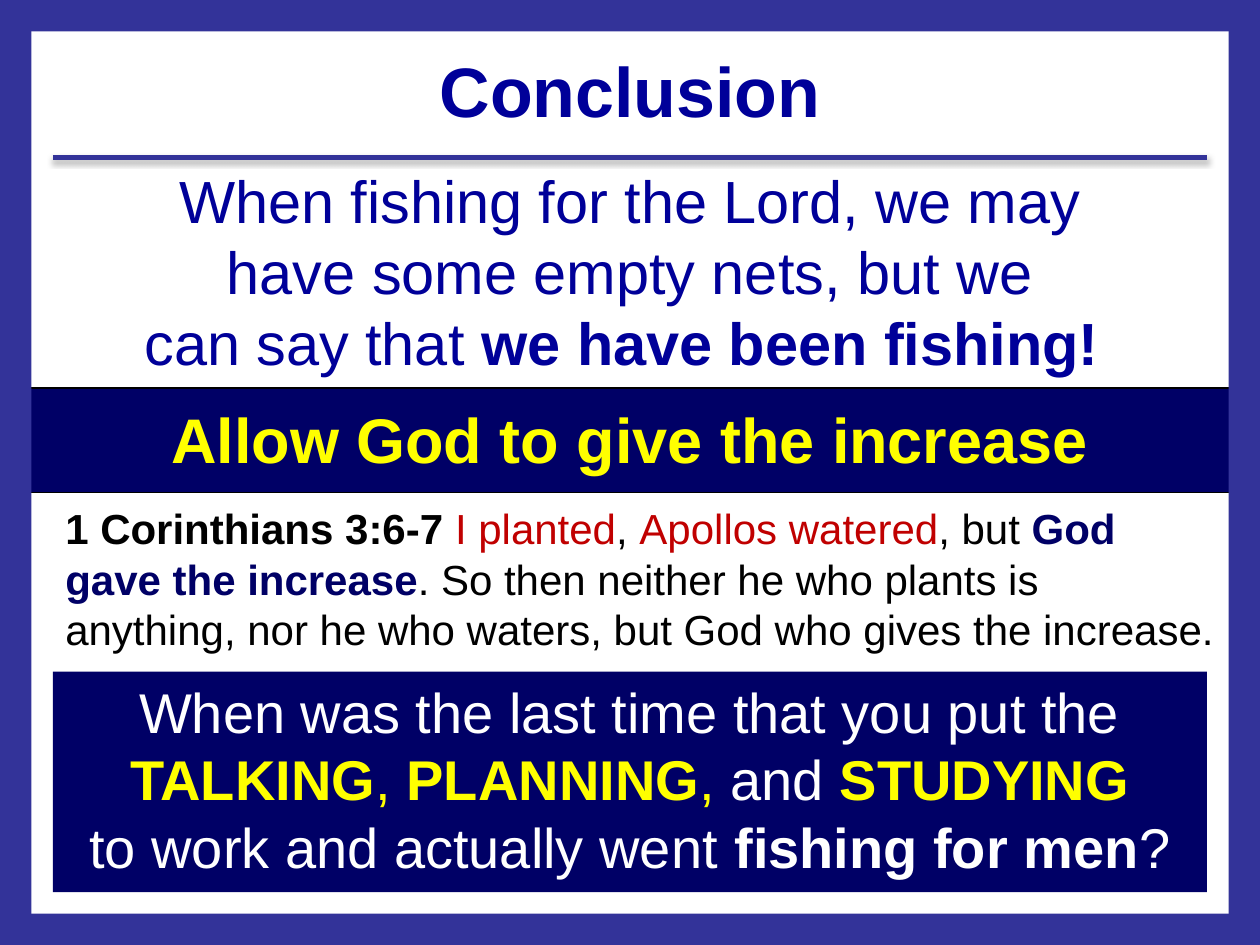
from dataclasses import dataclass

from lxml import etree
from pptx import Presentation
from pptx import util as u
from pptx.dml.color import RGBColor
from pptx.enum import shapes, text
from pptx.oxml.ns import qn

WIDTH, HEIGHT = 10, 7.5
FRAME = 0.25
MARGIN = 0.42
INNER = WIDTH - 2 * FRAME
PANEL = WIDTH - 2 * MARGIN
NAVY, BLUE, FRAME_BLUE = "000066", "000099", "333399"
YELLOW, RED, BLACK, WHITE = "FFFF00", "C00000", "000000", "FFFFFF"


@dataclass
class Area:
    left: float
    top: float
    width: float
    height: float

    def emu(self) -> list[int]:
        return [u.Inches(n) for n in (self.left, self.top, self.width, self.height)]


@dataclass
class Span:
    words: str
    color: str
    bold: bool = False


@dataclass
class Block:
    area: Area
    size: int
    spans: list[Span]
    centered: bool = True


BARS = [
    Area(0, 0, WIDTH, FRAME),
    Area(0, HEIGHT - FRAME, WIDTH, FRAME),
    Area(0, 0, FRAME, HEIGHT),
    Area(WIDTH - FRAME, 0, FRAME, HEIGHT),
]
BAND = Area(0, 3.08, WIDTH, 0.83)
QUESTION_PANEL = Area(MARGIN, 5.33, PANEL, 1.75)

TITLE = Block(Area(FRAME, 0.33, INNER, 0.77), 40, [Span("Conclusion", BLUE, True)])
MESSAGE = Block(Area(FRAME, 1.25, INNER, 1.82), 34, [
    Span("When fishing for the Lord, we may\vhave some empty nets, but we\vcan say that", BLUE),
    Span(" we have been fishing! ", BLUE, True),
])
INCREASE = Block(Area(FRAME, 3.13, INNER, 0.71), 36, [
    Span("Allow God to give the increase", YELLOW, True),
])
VERSE = Block(Area(MARGIN, 3.94, WIDTH - FRAME - MARGIN, 1.31), 24, [
    Span("1 Corinthians 3:6-7 ", BLACK, True),
    Span("I planted", RED),
    Span(", ", BLACK),
    Span("Apollos watered", RED),
    Span(", but ", BLACK),
    Span("God gave the increase", NAVY, True),
    Span(". So then neither he who plants is anything, nor he who waters, "
         "but God who gives the increase.", BLACK),
], centered=False)
QUESTION = Block(Area(MARGIN, 5.33, PANEL, 1.72), 32, [
    Span("When was the last time that you put the ", WHITE),
    Span("TALKING", YELLOW, True),
    Span(", ", YELLOW),
    Span("PLANNING", YELLOW, True),
    Span(",", YELLOW),
    Span(" and ", WHITE),
    Span("STUDYING\v", YELLOW, True),
    Span("to work and actually went ", WHITE),
    Span("fishing for men", WHITE, True),
    Span("?", WHITE),
])


def rgb(value: str) -> RGBColor:
    return RGBColor.from_string(value)


def add_shadow(properties, blur: float, distance: float, angle: int, opacity: int) -> None:
    """Append an outer shadow; blur and distance in points, opacity in percent."""
    effects = etree.SubElement(properties, qn("a:effectLst"))
    shadow = etree.SubElement(effects, qn("a:outerShdw"), blurRad=str(u.Pt(blur)),
                              dist=str(u.Pt(distance)), dir=str(angle * 60000), rotWithShape="0")
    color = etree.SubElement(shadow, qn("a:srgbClr"), val=BLACK)
    etree.SubElement(color, qn("a:alpha"), val=str(opacity * 1000))


def add_panel(slide, area: Area, fill: str, outline: str | None = None) -> None:
    panel = slide.shapes.add_shape(shapes.MSO_SHAPE.RECTANGLE, *area.emu())
    panel.shadow.inherit = False
    panel.fill.solid()
    panel.fill.fore_color.rgb = rgb(fill)
    if outline:
        panel.line.color.rgb = rgb(outline)
        panel.line.width = u.Pt(0.75)
    else:
        panel.line.fill.background()


def add_block(slide, block: Block):
    """Draw one paragraph of mixed spans and return it."""
    box = slide.shapes.add_textbox(*block.area.emu())
    box.text_frame.word_wrap = True
    para = box.text_frame.paragraphs[0]
    para.alignment = text.PP_ALIGN.CENTER if block.centered else text.PP_ALIGN.LEFT
    para.font.name = "Arial"
    para.font.size = u.Pt(block.size)
    for span in block.spans:
        for index, line in enumerate(span.words.split("\v")):
            if index:
                para.add_line_break()
            if line:
                run = para.add_run()
                run.text = line
                run.font.bold = span.bold
                run.font.color.rgb = rgb(span.color)
    return para


def add_rule(slide) -> None:
    ends = [u.Inches(n) for n in (MARGIN, 1.25, WIDTH - MARGIN, 1.25)]
    rule = slide.shapes.add_connector(shapes.MSO_CONNECTOR.STRAIGHT, *ends)
    rule.line.color.rgb = rgb(FRAME_BLUE)
    rule.line.width = u.Pt(3)
    add_shadow(rule._element.spPr, blur=3.1, distance=1.8, angle=90, opacity=35)


def main() -> None:
    deck = Presentation()
    deck.slide_width, deck.slide_height = u.Inches(WIDTH), u.Inches(HEIGHT)
    slide = deck.slides.add_slide(deck.slide_layouts[6])

    add_panel(slide, QUESTION_PANEL, NAVY)
    add_block(slide, MESSAGE)
    add_panel(slide, BAND, NAVY, BLACK)
    increase = add_block(slide, INCREASE)
    add_shadow(increase.runs[0].font._element, blur=3, distance=3, angle=45, opacity=100)
    add_block(slide, QUESTION)
    for bar in BARS:
        add_panel(slide, bar, FRAME_BLUE)
    add_block(slide, TITLE)
    add_rule(slide)
    add_block(slide, VERSE)
    deck.save("out.pptx")


if __name__ == "__main__":
    main()
